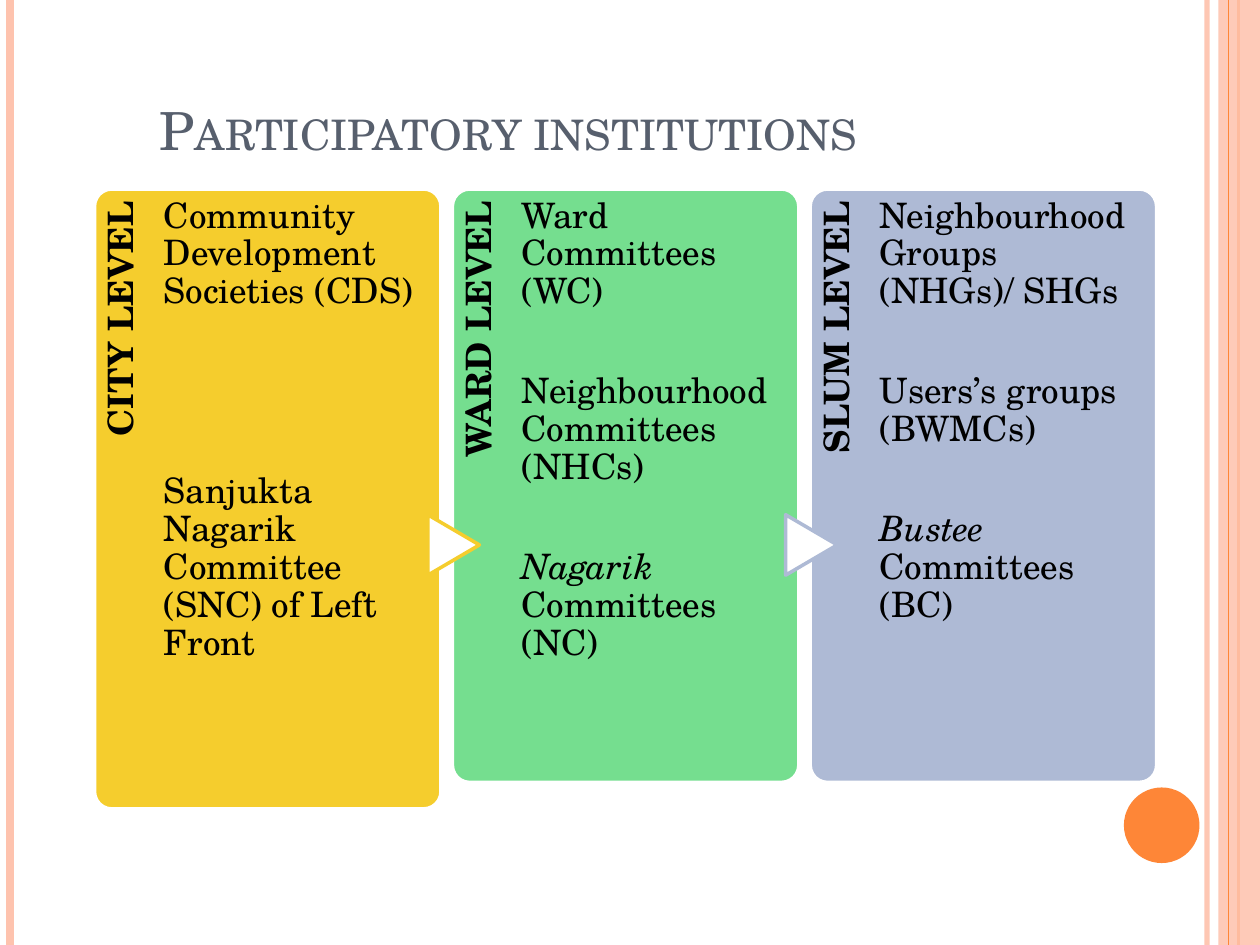
from dataclasses import dataclass

from lxml.etree import SubElement
from pptx import Presentation
from pptx.dml.color import RGBColor
from pptx.enum.shapes import MSO_CONNECTOR, MSO_SHAPE
from pptx.enum.text import MSO_ANCHOR, PP_ALIGN
from pptx.oxml.ns import qn
from pptx.slide import Slide
from pptx.util import Inches, Pt

ORANGE, PEACH, WHITE = "FE8637", "FEC3AE", "FFFFFF"
PANEL_TOP, PANEL_WIDTH, PANEL_PITCH = 1.5, 2.75, 2.84
LABEL_WIDTH, LABEL_SHARE = 0.55, 0.82
SPACE_AFTER, EMPTY_LINE = 7, 28.6

PANELS = [
    ("CITY LEVEL", "F5CD2D", 4.92, 3, [
        [("Community Development Societies (CDS)", False)],
        [("Sanjukta Nagarik Committee (SNC) of Left Front", False)],
    ]),
    ("WARD LEVEL", "75DE8F", 4.71, 1, [
        [("Ward Committees (WC)", False)],
        [("Neighbourhood Committees (NHCs)", False)],
        [("Nagarik", True), (" Committees (NC)", False)],
    ]),
    ("SLUM LEVEL", "AEBAD5", 4.71, 1, [
        [("Neighbourhood Groups (NHGs)/ SHGs", False)],
        [("Users’s groups (BWMCs)", False)],
        [("Bustee ", True), ("Committees (BC)", False)],
    ]),
]


def paint(color_format, color, opacity=100):
    """Set a colour from a hex string, with opacity in percent."""
    color_format.rgb = RGBColor.from_string(color)
    if opacity < 100:
        for element in color_format._xFill.iter(qn("a:srgbClr")):
            SubElement(element, qn("a:alpha"), val=str(opacity * 1000))


def write(frame, paragraphs, font="TeX Gyre Schola", size=20, color="000000", bold=False,
          small_caps=False, align=PP_ALIGN.LEFT, spacing=1.0, after=0):
    """Fill a text frame with paragraphs, each a list of (text, italic) runs."""
    for index, runs in enumerate(paragraphs):
        paragraph = frame.paragraphs[0] if index == 0 else frame.add_paragraph()
        paragraph.alignment = align
        paragraph.line_spacing = spacing
        paragraph.space_after = Pt(after)
        for text, italic in runs:
            run = paragraph.add_run()
            run.text = text
            run.font.name = font
            run.font.size = Pt(size)
            run.font.bold = bold
            run.font.italic = italic
            paint(run.font.color, color)
            if small_caps:
                run.font._element.set("cap", "small")


@dataclass
class SlideBuilder:
    """Holds the slide and its style, and adds each kind of element."""

    slide: Slide
    font: str = "TeX Gyre Schola"

    def rule(self, x, color, width, opacity=100):
        """Add a vertical line over the full slide height."""
        line = self.slide.shapes.add_connector(
            MSO_CONNECTOR.STRAIGHT, Inches(x), 0, Inches(x), Inches(7.5))
        line.line.width = Pt(width)
        line.line.fill.solid()
        paint(line.line.fill.fore_color, color, opacity)
        SubElement(line._element.spPr, qn("a:effectLst"))

    def shape(self, kind, box, fill, outline=None, opacity=100, rotation=0):
        """Add a filled preset shape, outlined if a colour is given."""
        shape = self.slide.shapes.add_shape(kind, *map(Inches, box))
        shape.shadow.inherit = False
        shape.rotation = rotation
        shape.fill.solid()
        paint(shape.fill.fore_color, fill, opacity)
        if outline:
            shape.line.width = Pt(2)
            paint(shape.line.color, outline)
        else:
            shape.line.fill.background()
        return shape

    def text(self, box, paragraphs, insets, anchor=MSO_ANCHOR.TOP, rotation=0, **style):
        """Add a wrapped text box with left, top, right and bottom insets."""
        text_box = self.slide.shapes.add_textbox(*map(Inches, box))
        text_box.rotation = rotation
        frame = text_box.text_frame
        frame.word_wrap = True
        frame.vertical_anchor = anchor
        (frame.margin_left, frame.margin_top,
         frame.margin_right, frame.margin_bottom) = map(Inches, insets)
        write(frame, paragraphs, font=self.font, **style)

    def panel(self, left, label, color, height, empty_lines, paragraphs, arrow_color):
        """Add a panel with its side label, body text and incoming arrow."""
        shape = self.shape(MSO_SHAPE.ROUNDED_RECTANGLE,
                           (left, PANEL_TOP, PANEL_WIDTH, height), color, WHITE)
        shape.adjustments[0] = 0.05
        length = height * LABEL_SHARE
        self.text((left + (LABEL_WIDTH - length) / 2, PANEL_TOP + (length - LABEL_WIDTH) / 2,
                   length, LABEL_WIDTH), [[(label, False)]], (0, 0.07, 0.1, 0),
                  rotation=270, bold=True, align=PP_ALIGN.RIGHT, spacing=0.9)
        if arrow_color:
            self.shape(MSO_SHAPE.FLOWCHART_EXTRACT, (left - 0.23, 4.12, 0.48, 0.41),
                       WHITE, arrow_color, rotation=90)
        self.text((left + LABEL_WIDTH, PANEL_TOP, 2.05, height), paragraphs, (0, 0.07, 0, 0),
                  spacing=0.9, after=SPACE_AFTER + empty_lines * EMPTY_LINE)


def main():
    """Build and save the slide."""
    presentation = Presentation()
    presentation.slide_width, presentation.slide_height = Inches(10), Inches(7.5)
    builder = SlideBuilder(presentation.slides.add_slide(presentation.slide_layouts[6]))

    builder.rule(9.58, PEACH, 3, opacity=93)
    builder.rule(0.08, PEACH, 4.5)
    builder.rule(9.83, ORANGE, 1.5)
    builder.shape(MSO_SHAPE.RECTANGLE, (9.67, 0, 0.33, 7.5), PEACH, opacity=87)
    builder.rule(9.75, ORANGE, 0.75)
    builder.shape(MSO_SHAPE.OVAL, (8.92, 6.25, 0.6, 0.6), ORANGE)
    builder.text((1.17, 0.08, 8.2, 1.25), [[("Participatory institutions", False)]],
                 (0.1, 0.05, 0.1, 0.05), anchor=MSO_ANCHOR.BOTTOM,
                 size=30, color="575F6D", small_caps=True)

    arrow_colors = [None, PANELS[0][1], PANELS[2][1]]
    for index, (panel, arrow_color) in enumerate(zip(PANELS, arrow_colors)):
        builder.panel(0.75 + index * PANEL_PITCH, *panel, arrow_color)
    presentation.save("out.pptx")


if __name__ == "__main__":
    main()
